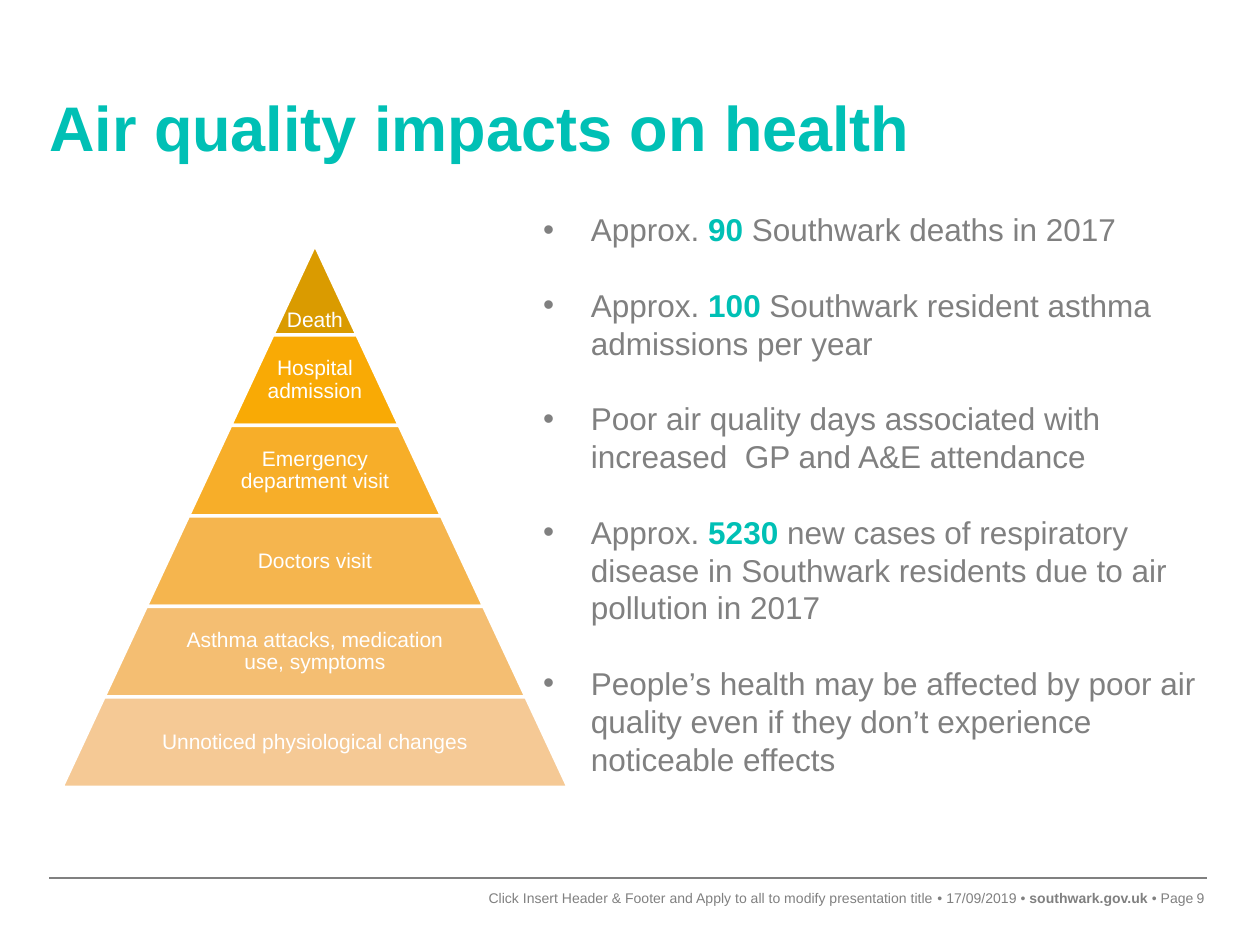
from pptx import Presentation, util as u
from pptx.dml.color import RGBColor
from pptx.enum import shapes, text
from pptx.oxml import parse_xml
from pptx.oxml.ns import nsdecls
from pptx.util import Inches, Pt

FONT = "Arial"
TEAL = RGBColor(0x00, 0xC0, 0xB5)
GREY = RGBColor(0x80, 0x80, 0x80)
WHITE = RGBColor(0xFF, 0xFF, 0xFF)

# Content
TITLE = "Air quality impacts on health"
LEVELS = [  # top to bottom
    ("Death", RGBColor(0xDA, 0x9B, 0x00)),
    ("Hospital admission", RGBColor(0xF9, 0xAA, 0x05)),
    ("Emergency department visit", RGBColor(0xF7, 0xAE, 0x29)),
    ("Doctors visit", RGBColor(0xF5, 0xB5, 0x4E)),
    ("Asthma attacks, medication use, symptoms", RGBColor(0xF4, 0xBE, 0x72)),
    ("Unnoticed physiological changes", RGBColor(0xF5, 0xC9, 0x95)),
]
# Each bullet is a list of (text, highlighted)
BULLETS = [
    [("Approx. ", False), ("90", True), (" Southwark deaths in 2017", False)],
    [("Approx. ", False), ("100", True),
     (" Southwark resident asthma admissions per year", False)],
    [("Poor air quality days associated with increased  GP and A&E attendance", False)],
    [("Approx. ", False), ("5230", True),
     (" new cases of respiratory disease in Southwark residents due to air "
      "pollution in 2017", False)],
    [("People’s health may be affected by poor air quality even if they don’t "
      "experience noticeable effects", False)],
]
LEFT, RIGHT = text.PP_ALIGN.LEFT, text.PP_ALIGN.RIGHT
# Left, width, alignment, wrap, runs of (text, bold)
FOOTER = [
    (0.58, 6.83, RIGHT, True,
     [("Click Insert Header & Footer and Apply to all to modify presentation title", False)]),
    (7.44, 0.04, LEFT, False, [("•", False)]),
    (7.47, 0.6, RIGHT, True, [("17/09/2019", False)]),
    (8.1, 1.39, LEFT, False,
     [("• ", False), ("southwark.gov.uk", True), (" • Page", False)]),
    (9.25, 0.31, RIGHT, True, [("9", False)]),
]

# Layout in inches
PYRAMID_CENTER, PYRAMID_TOP, PYRAMID_HEIGHT, PYRAMID_WIDTH = 2.5, 1.94, 4.31, 4.02
BAND_HEIGHT = PYRAMID_HEIGHT / len(LEVELS)
BAND_STEP = PYRAMID_WIDTH / len(LEVELS)
LABEL_SHARE = 0.65
FOOTER_TOP, FOOTER_HEIGHT = 7.06, 0.13
BODY_LINE = Pt(21.6)


def place(shape, left, top, width, height):
    shape.left, shape.top = Inches(left), Inches(top)
    shape.width, shape.height = Inches(width), Inches(height)


def set_frame(frame, anchor, inset=0, wrap=True):
    frame.word_wrap = wrap
    frame.auto_size = text.MSO_AUTO_SIZE.NONE
    frame.vertical_anchor = anchor
    frame.margin_left = frame.margin_right = Inches(inset)
    frame.margin_top = frame.margin_bottom = Inches(inset)


def add_run(paragraph, words, size, color, bold=False):
    run = paragraph.add_run()
    run.text = words
    run.font.name, run.font.size, run.font.bold = FONT, Pt(size), bold
    run.font.color.rgb = color


def add_text_box(slide, left, top, width, height, anchor, inset=0, wrap=True):
    box = slide.shapes.add_textbox(*map(Inches, (left, top, width, height)))
    set_frame(box.text_frame, anchor, inset, wrap)
    return box.text_frame.paragraphs[0]


def add_title(slide):
    title = slide.shapes.title
    place(title, 0.39, 0.35, 9.02, 0.95)
    set_frame(title.text_frame, text.MSO_ANCHOR.BOTTOM)
    paragraph = title.text_frame.paragraphs[0]
    paragraph.alignment = LEFT
    paragraph.line_spacing = Pt(66)
    add_run(paragraph, TITLE, 36, TEAL, True)


def add_pyramid(slide):
    for index, (label, color) in enumerate(LEVELS):
        width = BAND_STEP * (index + 1)
        top = PYRAMID_TOP + BAND_HEIGHT * index
        band = slide.shapes.add_shape(
            shapes.MSO_SHAPE.TRAPEZOID, Inches(PYRAMID_CENTER - width / 2),
            Inches(top), Inches(width), Inches(BAND_HEIGHT))
        band.adjustments[0] = BAND_STEP / 2 / min(width, BAND_HEIGHT)
        band.shadow.inherit = False
        band.fill.solid()
        band.fill.fore_color.rgb = color
        band.line.color.rgb = WHITE
        band.line.width = Pt(2)

        # The tip holds its label at the base; the others are centred
        tip = index == 0
        label_width = width if tip else width * LABEL_SHARE
        anchor = text.MSO_ANCHOR.BOTTOM if tip else text.MSO_ANCHOR.MIDDLE
        paragraph = add_text_box(slide, PYRAMID_CENTER - label_width / 2, top,
                                 label_width, BAND_HEIGHT, anchor, 0.02)
        paragraph.alignment = text.PP_ALIGN.CENTER
        paragraph.line_spacing = 0.9
        add_run(paragraph, label, 12, WHITE)


def add_bullets(slide):
    body = slide.placeholders[1]
    place(body, 4.21, 1.62, 5.51, 5.86)
    frame = body.text_frame
    set_frame(frame, text.MSO_ANCHOR.TOP)
    frame.margin_left = frame.margin_right = Inches(0.1)
    frame.margin_top = frame.margin_bottom = Inches(0.05)
    for index, runs in enumerate(BULLETS):
        paragraph = frame.add_paragraph() if index else frame.paragraphs[0]
        paragraph.alignment = LEFT
        paragraph.line_spacing = BODY_LINE
        paragraph.space_before = Pt(0)
        paragraph.space_after = BODY_LINE if index < len(BULLETS) - 1 else Pt(0)
        properties = paragraph._p.get_or_add_pPr()
        properties.set("marL", str(Inches(0.38)))
        properties.set("indent", str(-Inches(0.38)))
        properties.append(parse_xml(f'<a:buFont {nsdecls("a")} typeface="{FONT}"/>'))
        properties.append(parse_xml(f'<a:buChar {nsdecls("a")} char="•"/>'))
        for words, highlighted in runs:
            add_run(paragraph, words, 18, TEAL if highlighted else GREY, highlighted)


def add_footer(slide):
    rule = slide.shapes.add_connector(
        shapes.MSO_CONNECTOR.STRAIGHT, *map(Inches, (0.39, 6.97, 9.58, 6.97)))
    rule.line.color.rgb = GREY
    rule.line.width = Pt(1)
    rule._element.spPr.append(parse_xml(f'<a:effectLst {nsdecls("a")}/>'))
    for left, width, alignment, wrap, runs in FOOTER:
        paragraph = add_text_box(slide, left, FOOTER_TOP, width, FOOTER_HEIGHT,
                                 text.MSO_ANCHOR.TOP, wrap=wrap)
        paragraph.alignment = alignment
        for words, bold in runs:
            add_run(paragraph, words, 8, GREY, bold)


def main():
    presentation = Presentation()
    presentation.slide_width = u.Inches(10)
    presentation.slide_height = u.Inches(7.5)
    slide = presentation.slides.add_slide(presentation.slide_layouts[1])
    add_footer(slide)
    add_title(slide)
    add_pyramid(slide)
    add_bullets(slide)
    presentation.save("out.pptx")


if __name__ == "__main__":
    main()
